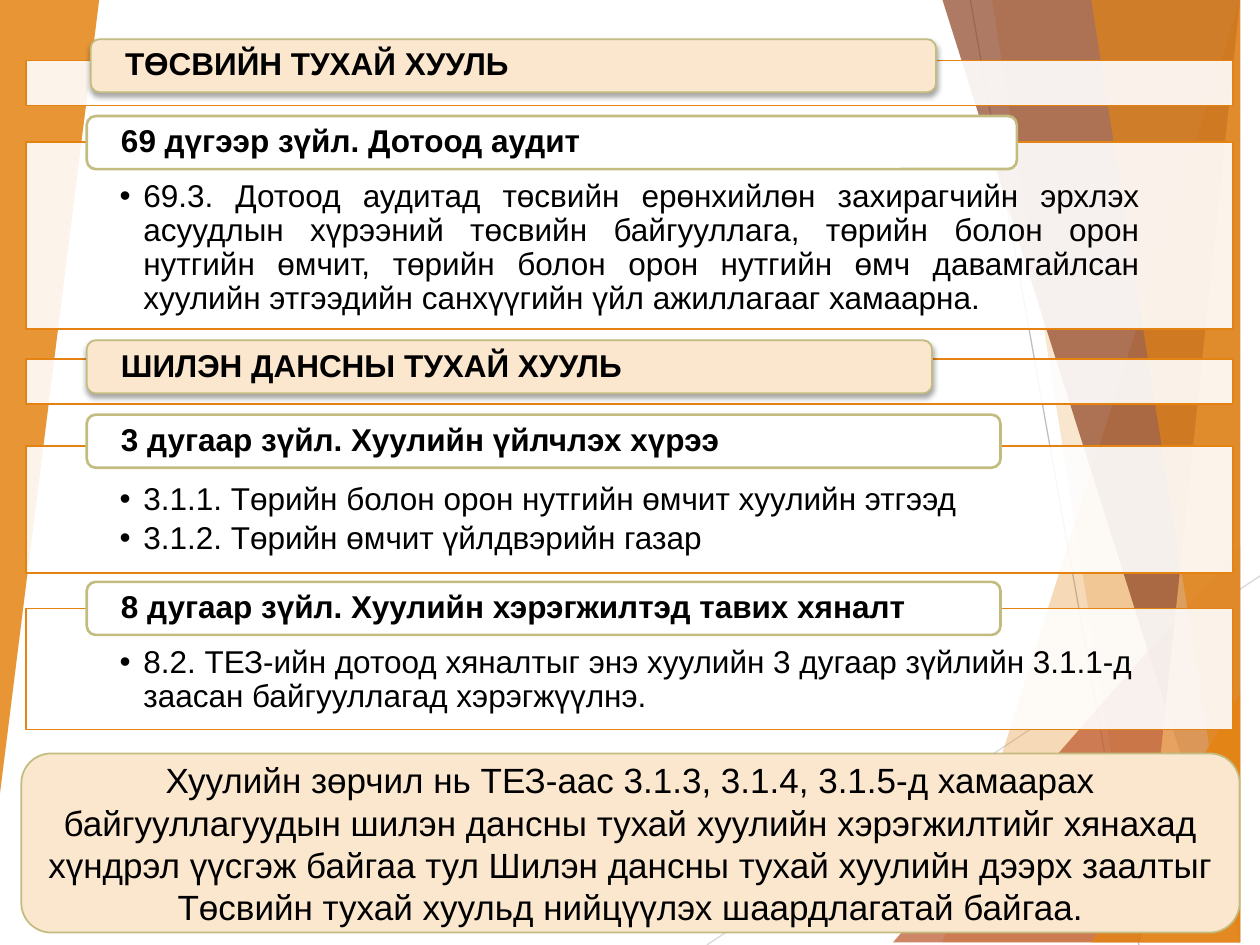
from dataclasses import dataclass

from lxml import etree
from pptx import Presentation
from pptx import util as u
from pptx.dml.color import RGBColor
from pptx.enum import shapes, text
from pptx.oxml import ns

WIDTH, HEIGHT = 25.4, 19.05
PANEL_LEFT, PANEL_WIDTH = 0.53, 24.33
TAB_HEIGHT, TAB_EDGE = 1.07, 0.05


@dataclass(frozen=True)
class Theme:
    font: str = "Arial"
    body_size: int = 18
    note_size: int = 20
    ink: str = "000000"
    white: str = "FFFFFF"
    orange: str = "E48312"
    rust: str = "BD582C"
    brown: str = "8E4221"
    amber: str = "F3B56C"
    cream: str = "FBE6CE"
    olive: str = "C2BC80"


THEME = Theme()


@dataclass(frozen=True)
class Facet:
    points: tuple
    color: str
    opacity: int


@dataclass(frozen=True)
class Section:
    heading: str
    panel_top: float
    panel_height: float
    tab_top: float
    tab_width: float
    tab_left: float = 1.75
    items: tuple = ()
    justified: bool = False


def band(top_x: float, bottom_x: float, color: str, opacity: int) -> Facet:
    """A full-height facet that reaches the right edge."""
    points = ((top_x, 0), (bottom_x, HEIGHT), (WIDTH, HEIGHT), (WIDTH, 0))
    return Facet(points, color, opacity)


def corner(left: float, top: float, color: str, opacity: int) -> Facet:
    """A triangle in the bottom right corner."""
    return Facet(((left, HEIGHT), (WIDTH, top), (WIDTH, HEIGHT)), color, opacity)


RAYS = [((14.25, HEIGHT), (WIDTH, 11.61), "D9D9D9"),
        ((19.56, 0), (22.96, HEIGHT), "BFBFBF")]
FACETS = [
    band(24.77, 19.15, THEME.orange, 30),
    band(20.02, 23.34, THEME.orange, 20),
    corner(18.44, 10.9, THEME.rust, 72),
    band(19.48, 24.64, THEME.brown, 70),
    band(24.92, 23.04, THEME.amber, 70),
    band(22.43, 25.04, THEME.orange, 65),
    corner(22.38, 13.59, THEME.orange, 80),
    Facet(((0, 0), (2.39, 0), (0, 15.8)), THEME.orange, 85),
]
SECTIONS = [
    Section("ТӨСВИЙН ТУХАЙ ХУУЛЬ", 1.22, 0.91, 0.79, 17.04, tab_left=1.83),
    Section("69 дүгээр зүйл. Дотоод аудит", 2.87, 3.76, 2.34, 18.75, justified=True, items=(
        "69.3. Дотоод аудитад төсвийн ерөнхийлөн захирагчийн эрхлэх асуудлын хүрээний "
        "төсвийн байгууллага, төрийн болон орон нутгийн өмчит, төрийн болон орон нутгийн "
        "өмч давамгайлсан хуулийн этгээдийн санхүүгийн үйл ажиллагааг хамаарна.",)),
    Section("ШИЛЭН ДАНСНЫ ТУХАЙ ХУУЛЬ", 7.24, 0.91, 6.86, 17.04),
    Section("3 дугаар зүйл. Хуулийн үйлчлэх хүрээ", 8.99, 2.57, 8.36, 18.42, items=(
        "3.1.1. Төрийн болон орон нутгийн өмчит хуулийн этгээд",
        "3.1.2. Төрийн өмчит үйлдвэрийн газар")),
    Section("8 дугаар зүйл. Хуулийн хэрэгжилтэд тавих хяналт", 12.27, 2.44, 11.73, 18.42, items=(
        "8.2. ТЕЗ-ийн дотоод хяналтыг энэ хуулийн 3 дугаар зүйлийн 3.1.1-д заасан "
        "байгууллагад хэрэгжүүлнэ.",)),
]
NOTE = ("Хуулийн зөрчил нь ТЕЗ-аас 3.1.3, 3.1.4, 3.1.5-д хамаарах байгууллагуудын шилэн "
        "дансны тухай хуулийн хэрэгжилтийг хянахад хүндрэл үүсгэж байгаа тул Шилэн дансны "
        "тухай хуулийн дээрх заалтыг Төсвийн тухай хуульд нийцүүлэх шаардлагатай байгаа.")


def add_node(parent, tag: str, **attributes):
    return etree.SubElement(parent, ns.qn(tag), attributes)


def paint(shape, color: str, opacity: int = 100, line: str = "", weight: float = 1) -> None:
    shape.shadow.inherit = False
    shape.fill.solid()
    shape.fill.fore_color.rgb = RGBColor.from_string(color)
    if opacity < 100:
        fill = shape._element.spPr.find(".//" + ns.qn("a:srgbClr"))
        add_node(fill, "a:alpha", val=str(opacity * 1000))
    if line:
        shape.line.color.rgb = RGBColor.from_string(line)
        shape.line.width = u.Pt(weight)
    else:
        shape.line.fill.background()


def add_soft_shadow(shape) -> None:
    effects = shape._element.spPr.find(ns.qn("a:effectLst"))
    shadow = add_node(effects, "a:outerShdw", blurRad=str(u.Pt(3)), dist=str(u.Pt(2)),
                      dir="5400000", rotWithShape="0")
    add_node(add_node(shadow, "a:srgbClr", val=THEME.ink), "a:alpha", val="35000")


def place(shape, left: float, top: float, width: float, height: float) -> None:
    shape.left, shape.top = u.Cm(left), u.Cm(top)
    shape.width, shape.height = u.Cm(width), u.Cm(height)


def add_box(page, kind, *frame: float):
    return page.shapes.add_shape(kind, *map(u.Cm, frame))


def write(shape, lines, *, size=THEME.body_size, bold=False, align=text.PP_ALIGN.LEFT,
          anchor=text.MSO_ANCHOR.MIDDLE, insets=(0.25, 0.13, 0.25, 0.13), spacing=0.9,
          after=0, bullets=False) -> None:
    frame = shape.text_frame
    frame.word_wrap, frame.auto_size = True, text.MSO_AUTO_SIZE.NONE
    frame.vertical_anchor = anchor
    (frame.margin_left, frame.margin_top,
     frame.margin_right, frame.margin_bottom) = map(u.Cm, insets)
    for number, line in enumerate(lines):
        para = frame.add_paragraph() if number else frame.paragraphs[0]
        para.alignment, para.line_spacing = align, spacing
        para.space_before, para.space_after = u.Pt(0), u.Pt(after)
        if bullets:
            para.level = 1
            properties = para._p.get_or_add_pPr()
            properties.set("marL", str(u.Cm(0.48)))
            properties.set("indent", str(-u.Cm(0.48)))
            add_node(properties, "a:buFont", typeface=THEME.font)
            add_node(properties, "a:buChar", char="•")
        span = para.add_run()
        span.text = line
        span.font.name, span.font.size, span.font.bold = THEME.font, u.Pt(size), bold
        span.font.color.rgb = RGBColor.from_string(THEME.ink)


def draw_background(page) -> None:
    for start, end, color in RAYS:
        ray = page.shapes.add_connector(shapes.MSO_CONNECTOR.STRAIGHT,
                                        *map(u.Cm, start + end))
        ray.line.color.rgb, ray.line.width = RGBColor.from_string(color), u.Pt(0.75)
        add_node(ray._element.spPr, "a:effectLst")
    for facet in FACETS:
        first, *rest = facet.points
        outline = page.shapes.build_freeform(*first, scale=float(u.Cm(1)))
        outline.add_line_segments(rest, close=True)
        paint(outline.convert_to_shape(), facet.color, facet.opacity)


def draw_section(page, section: Section, title, bodies: list) -> None:
    # Panel with its list
    panel_frame = (PANEL_LEFT, section.panel_top, PANEL_WIDTH, section.panel_height)
    panel = add_box(page, shapes.MSO_SHAPE.RECTANGLE, *panel_frame)
    paint(panel, THEME.white, 90, THEME.orange)
    if section.items:
        body = bodies.pop(0)
        place(body, *panel_frame)
        page.shapes._spTree.append(body._element)
        align = text.PP_ALIGN.JUSTIFY if section.justified else text.PP_ALIGN.LEFT
        write(body, section.items, align=align, anchor=text.MSO_ANCHOR.TOP,
              insets=(1.88, 0.76, 1.88, 0.36), after=2.7, bullets=True)

    # Tab: article headings are white, law names are raised
    tab = add_box(page, shapes.MSO_SHAPE.ROUNDED_RECTANGLE, section.tab_left,
                  section.tab_top, section.tab_width, TAB_HEIGHT)
    if section.items:
        paint(tab, THEME.white, line=THEME.olive, weight=1.5)
    else:
        paint(tab, THEME.cream, line=THEME.olive)
        add_soft_shadow(tab)

    # Heading; the first one is the slide title
    heading = title or page.shapes.add_textbox(0, 0, 0, 0)
    place(heading, section.tab_left + TAB_EDGE, section.tab_top + TAB_EDGE,
          section.tab_width - 2 * TAB_EDGE, TAB_HEIGHT - 2 * TAB_EDGE)
    page.shapes._spTree.append(heading._element)
    write(heading, [section.heading], bold=True, insets=(0.64, 0, 0.64, 0))


def main() -> None:
    deck = Presentation()
    deck.slide_width, deck.slide_height = u.Cm(WIDTH), u.Cm(HEIGHT)
    page = deck.slides.add_slide(deck.slide_layouts.get_by_name("Comparison"))
    title, *bodies = page.placeholders

    draw_background(page)
    for number, section in enumerate(SECTIONS):
        draw_section(page, section, None if number else title, bodies)
    for spare in bodies:
        page.shapes._spTree.remove(spare._element)

    # Conclusion
    note = add_box(page, shapes.MSO_SHAPE.ROUNDED_RECTANGLE, 0.43, 15.19, 24.56, 3.61)
    paint(note, THEME.cream, line=THEME.olive)
    write(note, [NOTE], size=THEME.note_size, align=text.PP_ALIGN.CENTER, spacing=1.0)
    deck.save("out.pptx")


if __name__ == "__main__":
    main()
